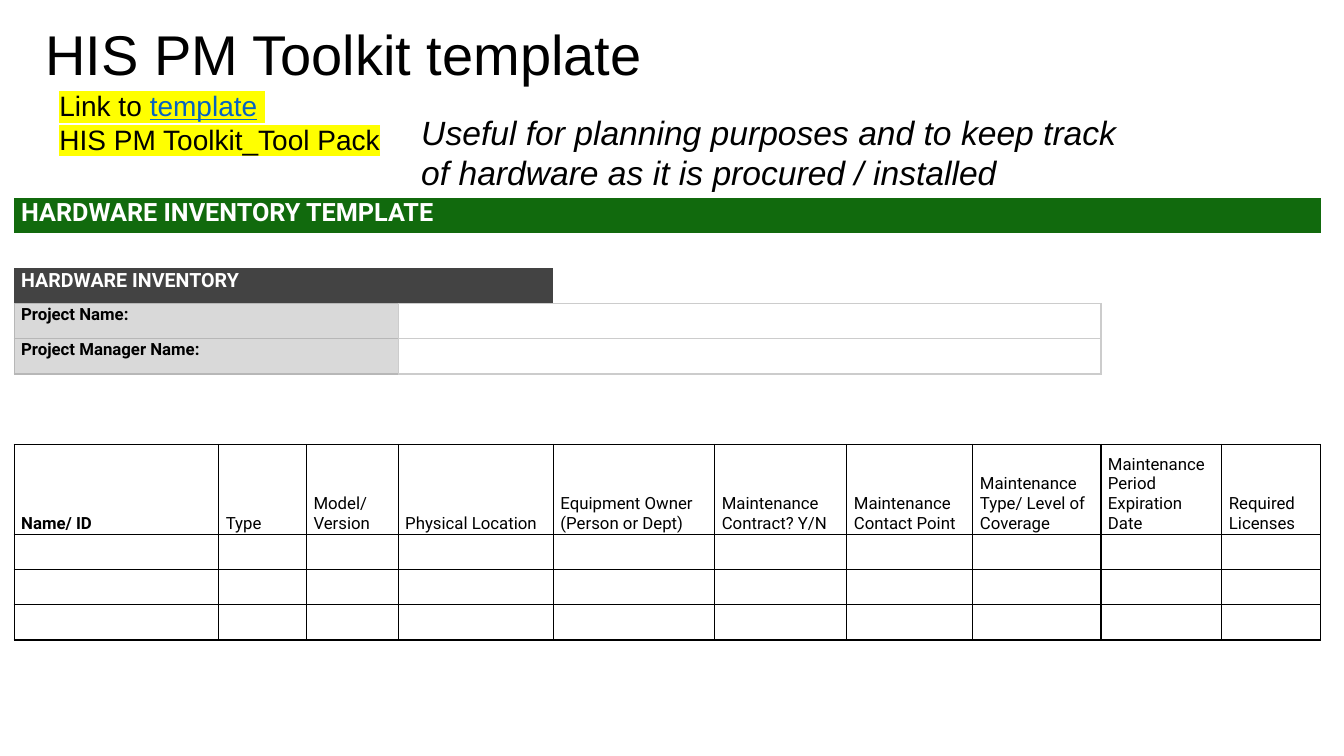
from dataclasses import dataclass

from lxml import etree
from pptx import Presentation
from pptx import util as u
from pptx.dml.color import RGBColor
from pptx.enum import text
from pptx.oxml import ns


@dataclass(frozen=True)
class Theme:
    sans: str = "Arial"
    table_font: str = "Roboto"
    black: str = "000000"
    white: str = "FFFFFF"
    green: str = "116A0D"
    charcoal: str = "434343"
    label: str = "D9D9D9"
    label_line: str = "B7B7B7"
    field_line: str = "CCCCCC"
    link: str = "0563C1"
    highlight: str = "FFFF00"
    title: int = 40
    note: int = 24
    body: int = 20
    banner: int = 18
    section: int = 14
    cell: int = 12


T = Theme()
COLUMNS = [2.03, 0.87, 0.91, 1.54, 1.6, 1.31, 1.25, 1.27, 1.2, 0.98]
ROW_COUNT, ROW_HEIGHT, HEADER_HEIGHT = 11, 0.35, 0.89
SECTION_ROW, PROJECT_ROWS, HEADER_ROW = 2, (3, 4), 7
LABEL_COLUMNS, SECTION_COLUMNS, PROJECT_COLUMNS = 3, 4, 8
HEADERS = [
    "Name/ ID", "Type", "Model/ Version", "Physical Location",
    "Equipment Owner \n(Person or Dept)", "Maintenance Contract? Y/N",
    "Maintenance Contact Point", "Maintenance Type/ Level of Coverage",
    "Maintenance Period Expiration Date", "Required Licenses",
]


def add_run(p, words, size, color=T.black, font=T.sans, bold=False,
            italic=False, underline=False, highlight=None):
    r = p.add_run()
    r.text = words
    r.font.size = u.Pt(size)
    r.font.name = font
    r.font.bold = bold
    r.font.italic = italic
    r.font.underline = underline
    r.font.color.rgb = RGBColor.from_string(color)
    if highlight:
        mark = etree.Element(ns.qn("a:highlight"))
        etree.SubElement(mark, ns.qn("a:srgbClr"), val=highlight)
        r.font._element.find(ns.qn("a:solidFill")).addnext(mark)


def add_title(s, words):
    sp = s.shapes.title
    sp.left, sp.top, sp.width, sp.height = map(u.Inches, (0.35, 0, 11.03, 1.13))
    tf = sp.text_frame
    tf.vertical_anchor = text.MSO_ANCHOR.MIDDLE
    p = tf.paragraphs[0]
    p.alignment = text.PP_ALIGN.LEFT
    p.line_spacing = 0.9
    add_run(p, words, T.title)


def add_text(s, box, paragraphs):
    tf = s.shapes.add_textbox(*map(u.Inches, box)).text_frame
    tf.word_wrap = True
    tf.auto_size = text.MSO_AUTO_SIZE.SHAPE_TO_FIT_TEXT
    for i, runs in enumerate(paragraphs):
        p = tf.add_paragraph() if i else tf.paragraphs[0]
        for words, style in runs:
            add_run(p, words, **style)


def borders(row, col):
    if row >= HEADER_ROW:
        return dict.fromkeys("LRTB", T.black)
    edges = {}
    if row in PROJECT_ROWS and col < PROJECT_COLUMNS:
        line = T.label_line if col < LABEL_COLUMNS else T.field_line
        edges = {"T": line, "B": line}
        if col == 0:
            edges["L"] = T.label_line
        if col == LABEL_COLUMNS:
            edges["L"] = T.field_line
        if col in (LABEL_COLUMNS - 1, PROJECT_COLUMNS - 1):
            edges["R"] = T.field_line
        if col == 0:
            edges["R"] = T.field_line
    elif row in PROJECT_ROWS and col == PROJECT_COLUMNS:
        edges["L"] = T.field_line
    elif row in (SECTION_ROW, PROJECT_ROWS[-1] + 1) and col < PROJECT_COLUMNS:
        split = SECTION_COLUMNS if row == SECTION_ROW else LABEL_COLUMNS
        side = "B" if row == SECTION_ROW else "T"
        edges[side] = T.label_line if col < split else T.field_line
    elif row == HEADER_ROW - 1:
        edges["B"] = T.black
    return edges


def set_borders(cell, edges):
    tcPr = cell._tc.get_or_add_tcPr()
    for side in "LRTB":
        ln = etree.SubElement(tcPr, ns.qn(f"a:ln{side}"), w=str(u.Pt(1)))
        if side in edges:
            fill = etree.SubElement(ln, ns.qn("a:solidFill"))
            etree.SubElement(fill, ns.qn("a:srgbClr"), val=edges[side])
        else:
            etree.SubElement(ln, ns.qn("a:noFill"))


def format_cell(cell, row, col):
    set_borders(cell, borders(row, col))
    cell.margin_left = cell.margin_right = u.Inches(0.07)
    cell.margin_top = cell.margin_bottom = u.Inches(0.01)
    outside = (row == SECTION_ROW and col >= SECTION_COLUMNS
               or row in PROJECT_ROWS and col >= PROJECT_COLUMNS)
    if outside:
        cell.fill.background()
    else:
        fill_cell(cell, T.white)
    end = cell.text_frame.paragraphs[0]._p.get_or_add_endParaRPr()
    end.set("sz", str(T.cell * 100))


def fill_cell(cell, color):
    cell.fill.solid()
    cell.fill.fore_color.rgb = RGBColor.from_string(color)


def write_cell(cell, words, size=T.cell, color=T.black, bold=True):
    p = cell.text_frame.paragraphs[0]
    for i, line in enumerate(words.split("\n")):
        if i:
            p.add_line_break()
        add_run(p, line, size, color, T.table_font, bold)


def add_band(table, row, span, words, fill, **style):
    cell = table.cell(row, 0)
    cell.merge(table.cell(row, span - 1))
    fill_cell(cell, fill)
    write_cell(cell, words, **style)


def add_inventory(s):
    height = ROW_HEIGHT * (ROW_COUNT - 1) + HEADER_HEIGHT
    box = map(u.Inches, (0.14, 1.96, sum(COLUMNS), height))
    table = s.shapes.add_table(ROW_COUNT, len(COLUMNS), *box).table
    table.first_row = table.horz_banding = False
    for column, width in zip(table.columns, COLUMNS):
        column.width = u.Inches(width)
    for i, row in enumerate(table.rows):
        row.height = u.Inches(HEADER_HEIGHT if i == HEADER_ROW else ROW_HEIGHT)
        for j, cell in enumerate(row.cells):
            format_cell(cell, i, j)
    add_band(table, 0, len(COLUMNS), "HARDWARE INVENTORY TEMPLATE", T.green,
             size=T.banner, color=T.white)
    add_band(table, SECTION_ROW, SECTION_COLUMNS, "HARDWARE INVENTORY",
             T.charcoal, size=T.section, color=T.white)
    for row, words in zip(PROJECT_ROWS, ("Project Name:", "Project Manager Name:")):
        add_band(table, row, LABEL_COLUMNS, words, T.label)
    for j, words in enumerate(HEADERS):
        cell = table.cell(HEADER_ROW, j)
        cell.vertical_anchor = text.MSO_ANCHOR.BOTTOM
        write_cell(cell, words, bold=j == 0)


def main():
    prs = Presentation()
    prs.slide_width, prs.slide_height = u.Inches(13.33), u.Inches(7.5)
    s = prs.slides.add_slide(prs.slide_layouts[5])
    add_title(s, "HIS PM Toolkit template")
    add_inventory(s)
    marked = {"size": T.body, "highlight": T.highlight}
    link = {**marked, "color": T.link, "underline": True}
    add_text(s, (0.49, 0.83, 3.6, 0.77), [
        [("Link to ", marked), ("template", link), (" ", marked)],
        [("HIS PM Toolkit_Tool Pack", marked)],
    ])
    note = ("Useful for planning purposes and to keep track "
            "of hardware as it is procured / installed")
    add_text(s, (4.08, 1.06, 7.43, 0.91),
             [[(note, {"size": T.note, "italic": True})]])
    prs.save("out.pptx")


if __name__ == "__main__":
    main()
